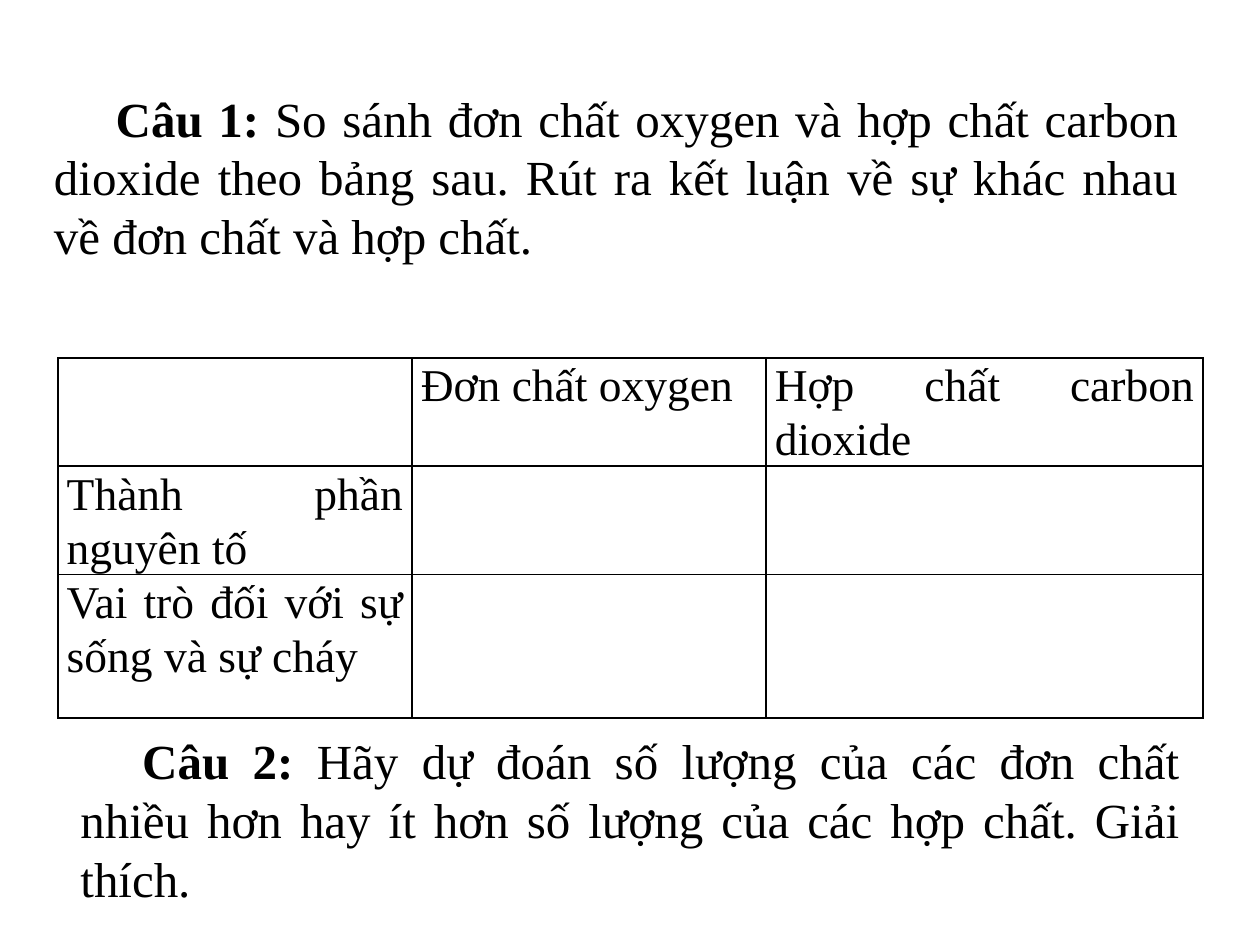
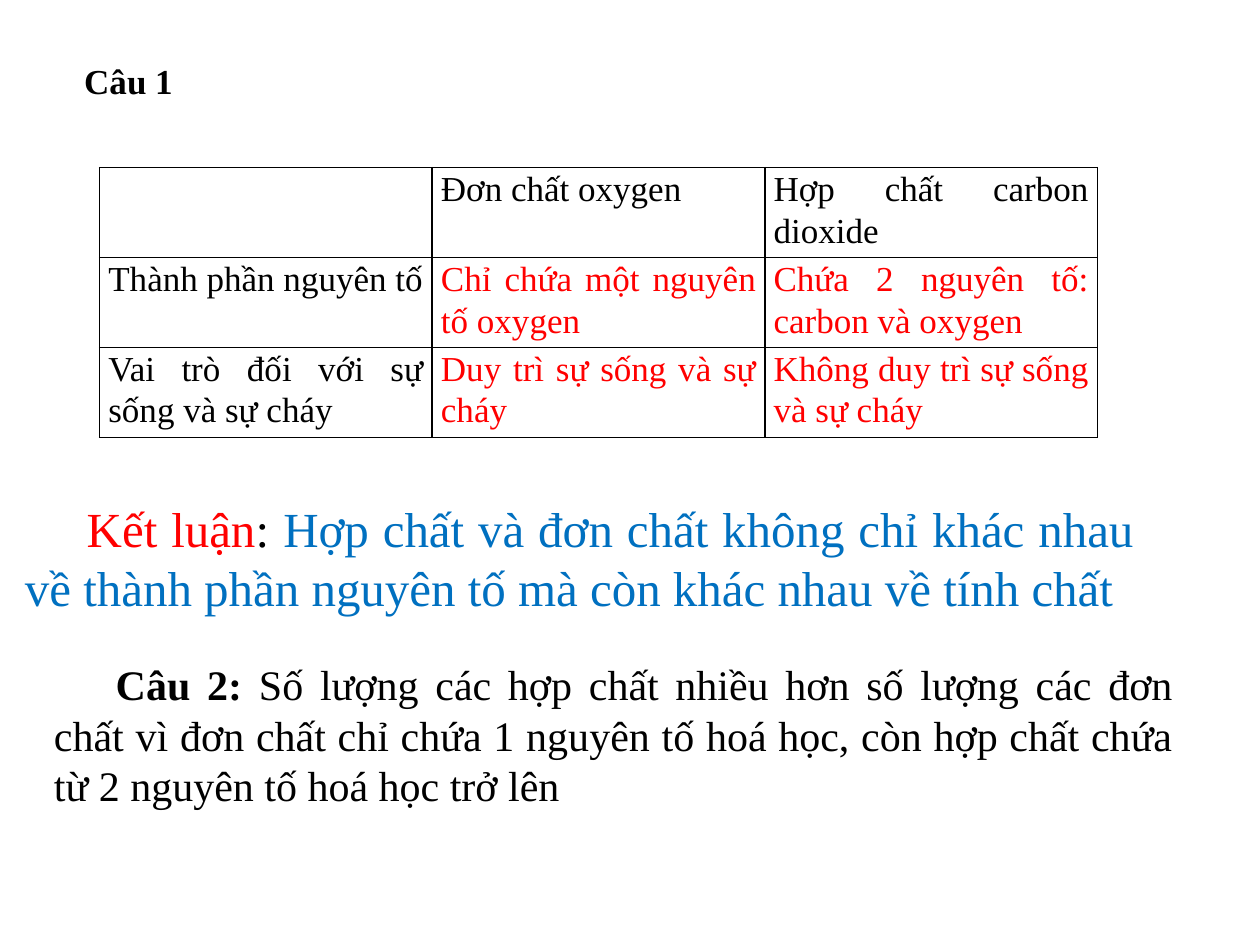
from dataclasses import dataclass

from lxml import etree
from pptx import Presentation
from pptx.dml.color import RGBColor
from pptx.enum.text import MSO_ANCHOR, MSO_AUTO_SIZE, PP_ALIGN
from pptx.oxml.ns import qn
from pptx.util import Inches, Pt

JUSTIFY = PP_ALIGN.JUSTIFY
TOP = MSO_ANCHOR.TOP
MIDDLE = MSO_ANCHOR.MIDDLE
GROW = MSO_AUTO_SIZE.SHAPE_TO_FIT_TEXT


@dataclass(frozen=True)
class Theme:
    font: str = "Times New Roman"
    ink: str = "000000"
    answer: str = "FF0000"
    conclusion: str = "0070C0"
    large: int = 28
    table_large: int = 26
    medium: int = 24
    small: int = 20
    border: float = 1
    first_line_indent: float = 0.49
    cell_margin: float = 0.07


def add_text(paragraph, text, *, font, size, color, bold=False):
    run = paragraph.add_run()
    run.text = text
    run.font.name = font
    run.font.size = Pt(size)
    run.font.bold = bold
    run.font.color.rgb = RGBColor.from_string(color)


def set_borders(cell, color, width):
    properties = cell._tc.get_or_add_tcPr()
    for position, side in enumerate(("a:lnL", "a:lnR", "a:lnT", "a:lnB")):
        line = etree.Element(qn(side), w=str(Pt(width)))
        fill = etree.SubElement(line, qn("a:solidFill"))
        etree.SubElement(fill, qn("a:srgbClr"), val=color)
        properties.insert(position, line)


class Deck:
    def __init__(self, theme):
        self.theme = theme
        self.presentation = Presentation()
        self.presentation.slide_width = Inches(10)
        self.presentation.slide_height = Inches(7.5)
        self.slide = None

    def add_slide(self):
        blank = self.presentation.slide_layouts[6]
        self.slide = self.presentation.slides.add_slide(blank)

    def add_paragraph_box(self, left, top, width, height, parts, size, anchor=TOP):
        box = self.slide.shapes.add_textbox(
            Inches(left), Inches(top), Inches(width), Inches(height))
        frame = box.text_frame
        frame.word_wrap = True
        frame.auto_size = GROW
        frame.vertical_anchor = anchor
        paragraph = frame.paragraphs[0]
        paragraph.alignment = JUSTIFY
        indent = Inches(self.theme.first_line_indent)
        paragraph._p.get_or_add_pPr().set("indent", str(indent))
        for text, style in parts:
            options = {"color": self.theme.ink, **style}
            add_text(paragraph, text, font=self.theme.font, size=size, **options)

    def add_question(self, left, top, width, height, label, text, size):
        parts = [(label, {"bold": True}), (text, {})]
        self.add_paragraph_box(left, top, width, height, parts, size)

    def add_comparison(self, left, top, widths, heights, answers, size):
        rows = [["", "Đơn chất oxygen", "Hợp chất carbon dioxide"],
                ["Thành phần nguyên tố", *answers[0]],
                ["Vai trò đối với sự sống và sự cháy", *answers[1]]]
        frame = self.slide.shapes.add_table(
            len(rows), len(widths), Inches(left), Inches(top),
            Inches(sum(widths)), Inches(sum(heights)))
        table = frame.table
        table.first_row = False
        table.horz_banding = False
        for column, width in zip(table.columns, widths):
            column.width = Inches(width)
        for row, height in zip(table.rows, heights):
            row.height = Inches(height)
        for row_index, row in enumerate(rows):
            for column_index, text in enumerate(row):
                is_answer = row_index > 0 and column_index > 0
                color = self.theme.answer if is_answer else self.theme.ink
                self.format_cell(table.cell(row_index, column_index), text, size, color)

    def format_cell(self, cell, text, size, color):
        cell.fill.background()
        set_borders(cell, self.theme.ink, self.theme.border)
        cell.margin_left = cell.margin_right = Inches(self.theme.cell_margin)
        cell.margin_top = cell.margin_bottom = 0
        if text:
            paragraph = cell.text_frame.paragraphs[0]
            paragraph.alignment = JUSTIFY
            paragraph.line_spacing = 1.07
            paragraph.space_before = paragraph.space_after = Pt(6)
            add_text(paragraph, text, font=self.theme.font, size=size, color=color)


def build_questions(deck):
    theme = deck.theme
    deck.add_slide()
    deck.add_comparison(0.46, 2.84, [2.81, 2.81, 3.47], [0.86, 0.86, 1.14],
                        [["", ""], ["", ""]], theme.table_large)
    deck.add_question(
        0.54, 5.75, 8.92, 1.51, "Câu 2: ",
        "Hãy dự đoán số lượng của các đơn chất nhiều hơn hay ít hơn "
        "số lượng của các hợp chất. Giải thích.", theme.large)
    deck.add_question(
        0.33, 0.65, 9.12, 1.51, "Câu 1: ",
        "So sánh đơn chất oxygen và hợp chất carbon dioxide theo bảng sau. "
        "Rút ra kết luận về sự khác nhau về đơn chất và hợp chất.", theme.large)


def build_answers(deck):
    theme = deck.theme
    deck.add_slide()
    answers = [["Chỉ chứa một nguyên tố oxygen", "Chứa 2 nguyên tố: carbon và oxygen"],
               ["Duy trì sự sống và sự cháy", "Không duy trì sự sống và sự cháy"]]
    deck.add_comparison(0.79, 1.33, [2.64] * 3, [0.71] * 3, answers, theme.small)
    deck.add_paragraph_box(0.08, 0.42, 9.17, 0.44, [("Câu 1", {"bold": True})],
                           theme.small, MIDDLE)
    deck.add_question(
        0.33, 5.18, 9.08, 1.31, "Câu 2: ",
        "Số lượng các hợp chất nhiều hơn số lượng các đơn chất vì đơn chất chỉ chứa "
        "1 nguyên tố hoá học, còn hợp chất chứa từ 2 nguyên tố hoá học trở lên",
        theme.medium)
    conclusion = [
        ("Kết luận", {"color": theme.answer}),
        (": ", {}),
        ("Hợp chất và đơn chất không chỉ khác nhau về thành phần nguyên tố "
         "mà còn khác nhau về tính chất", {"color": theme.conclusion})]
    deck.add_paragraph_box(0.1, 3.91, 9, 1.04, conclusion, theme.large)


def main():
    deck = Deck(Theme())
    build_questions(deck)
    build_answers(deck)
    deck.presentation.save("out.pptx")


if __name__ == "__main__":
    main()
